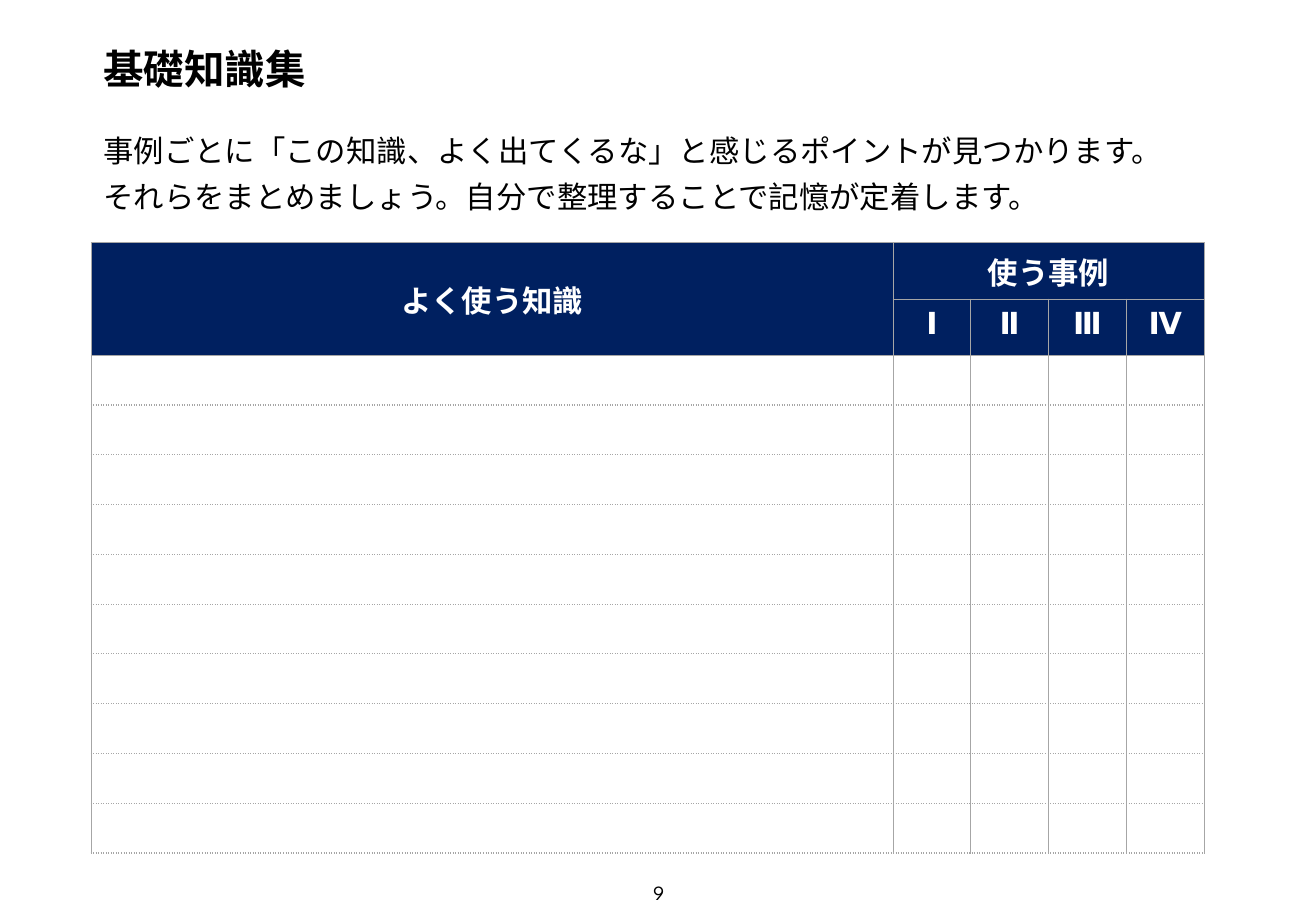
"""Build a study sheet with a table for noting key knowledge by case."""
from lxml.etree import SubElement
from pptx import Presentation
from pptx.dml.color import RGBColor
from pptx.enum.text import MSO_ANCHOR, MSO_AUTO_SIZE, PP_ALIGN
from pptx.oxml.ns import qn
from pptx.util import Inches, Pt

TITLE = "基礎知識集"
LEAD = [
    "事例ごとに「この知識、よく出てくるな」と感じるポイントが見つかります。",
    "それらをまとめましょう。自分で整理することで記憶が定着します。",
]
HEAD = "よく使う知識"
GROUP = "使う事例"
CASES = ["Ⅰ", "Ⅱ", "Ⅲ", "Ⅳ"]
PAGE = "9"
BLANKS = 10
SANS, LATIN = "Noto Sans CJK JP", "League Spartan"
NAVY, GREY, BLACK, WHITE = "002060", "A6A6A6", "000000", "FFFFFF"


def color(code):
    return RGBColor.from_string(code)


def write(frame, lines, size=18, font=SANS, ink=BLACK, bold=False,
          align=PP_ALIGN.LEFT, pitch=None, gap=0):
    frame.word_wrap = True
    for i, line in enumerate(lines):
        para = frame.add_paragraph() if i else frame.paragraphs[0]
        props = para._p.get_or_add_pPr()
        props.set("marL", "0")
        props.set("indent", "0")
        SubElement(props, qn("a:buNone"))
        para.alignment = align
        para.space_before = Pt(gap if i else 0)
        if pitch:
            para.line_spacing = Pt(pitch)
        run = para.add_run()
        run.text = line
        run.font.size = Pt(size)
        run.font.bold = bold
        run.font.name = font
        run.font.color.rgb = color(ink)
        SubElement(run._r.get_or_add_rPr(), qn("a:ea"), typeface=SANS)


def place(shape, left, top, width, height):
    shape.left, shape.top = Inches(left), Inches(top)
    shape.width, shape.height = Inches(width), Inches(height)
    frame = shape.text_frame
    frame.auto_size = MSO_AUTO_SIZE.NONE
    frame.vertical_anchor = MSO_ANCHOR.MIDDLE
    return frame


def border(cell, row):
    props = cell._tc.get_or_add_tcPr()
    dots = {"T": row > 2, "B": row > 1}
    for side in "LRTB":
        line = SubElement(props, qn("a:ln" + side), w=str(Pt(0.75)))
        fill = SubElement(line, qn("a:solidFill"))
        SubElement(fill, qn("a:srgbClr"), val=GREY)
        dash = "sysDot" if dots.get(side) else "solid"
        SubElement(line, qn("a:prstDash"), val=dash)


def build_table(slide):
    widths = [6.6] + [0.64] * len(CASES)
    heights = [0.4] * 2 + [0.41] * BLANKS
    frame = slide.shapes.add_table(
        len(heights), len(widths), Inches(0.75), Inches(2),
        Inches(sum(widths)), Inches(sum(heights)))
    table = frame.table
    table.first_row = table.horz_banding = False
    for col, width in zip(table.columns, widths):
        col.width = Inches(width)
    for r, height in enumerate(heights):
        table.rows[r].height = Inches(height)
        for c in range(len(widths)):
            cell = table.cell(r, c)
            border(cell, r)
            if r < 2:
                cell.fill.solid()
                cell.fill.fore_color.rgb = color(NAVY)
            else:
                cell.fill.background()
                cell.margin_top = cell.margin_bottom = Inches(0.02)
    table.cell(0, 0).merge(table.cell(1, 0))
    table.cell(0, 1).merge(table.cell(0, len(CASES)))
    labels = {(0, 0): HEAD, (0, 1): GROUP}
    labels.update({(1, c): case for c, case in enumerate(CASES, 1)})
    for spot, text in labels.items():
        cell = table.cell(*spot)
        cell.vertical_anchor = MSO_ANCHOR.MIDDLE
        write(cell.text_frame, [text], font=LATIN, ink=WHITE, bold=True,
              align=PP_ALIGN.CENTER)


def main():
    deck = Presentation()
    deck.slide_width, deck.slide_height = Inches(10.83), Inches(7.5)
    slide = deck.slides.add_slide(deck.slide_layouts[1])
    title = place(slide.shapes.title, 0.75, 0.33, 9.34, 0.5)
    write(title, [TITLE], size=24, bold=True, pitch=26)
    body = place(slide.placeholders[1], 0.75, 1.03, 9.34, 0.76)
    write(body, LEAD, pitch=24, gap=3)
    build_table(slide)
    page = slide.shapes.add_textbox(0, 0, 0, 0)
    write(place(page, 4.2, 7.2, 2.44, 0.3), [PAGE], size=12, font=LATIN,
          align=PP_ALIGN.CENTER)
    deck.save("out.pptx")


if __name__ == "__main__":
    main()
